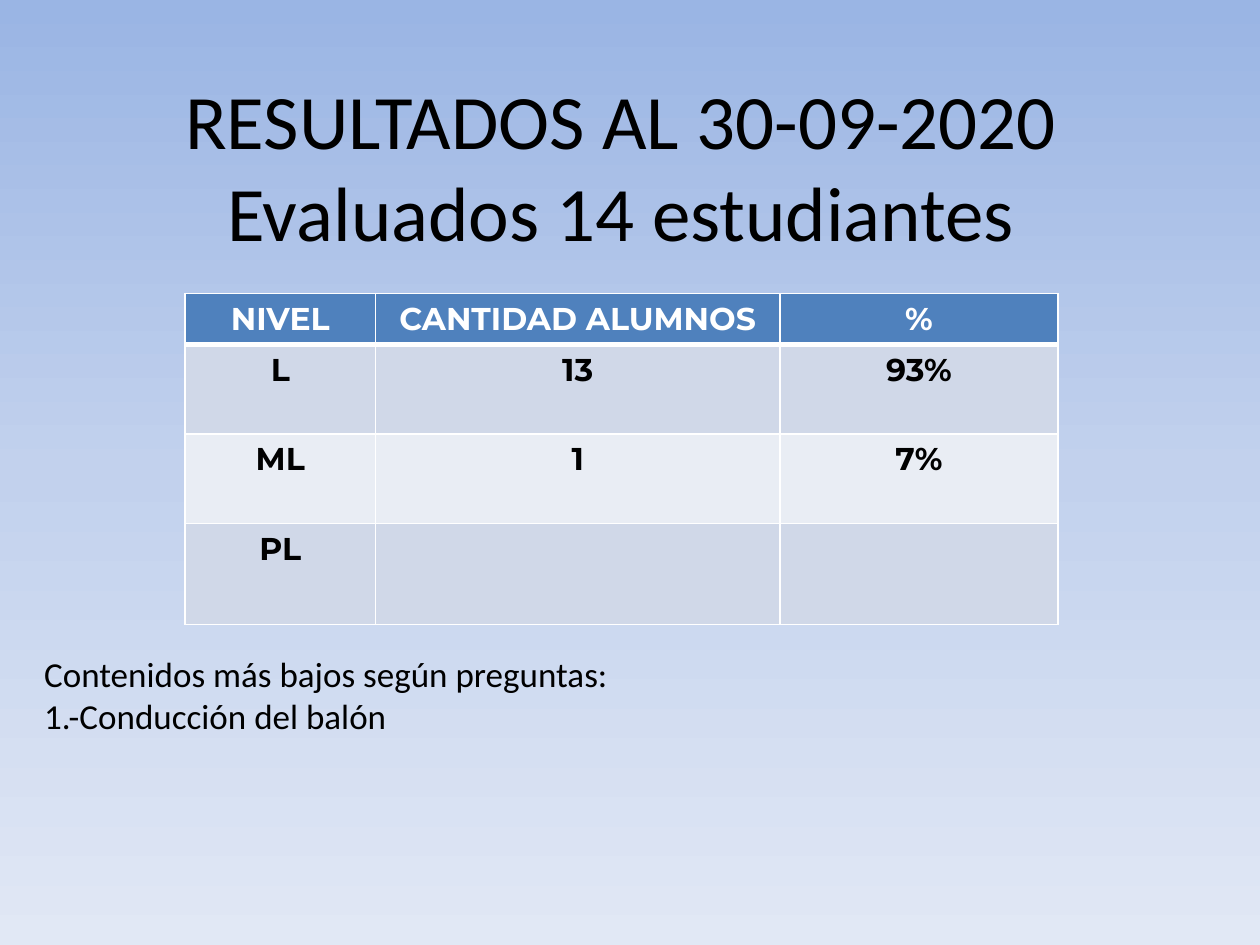
from copy import deepcopy

from lxml.etree import SubElement
from pptx import Presentation
from pptx.dml.color import RGBColor
from pptx.enum.text import MSO_ANCHOR, MSO_AUTO_SIZE, PP_ALIGN
from pptx.oxml.ns import qn
from pptx.util import Cm, Pt

BLACK = RGBColor(0x00, 0x00, 0x00)
WHITE = RGBColor(0xFF, 0xFF, 0xFF)
HEADER_BLUE = RGBColor(0x4F, 0x81, 0xBD)
BAND_DARK = RGBColor(0xD0, 0xD8, 0xE8)
BAND_LIGHT = RGBColor(0xE9, 0xED, 0xF4)
SKY = [RGBColor(0x9A, 0xB5, 0xE4), RGBColor(0xC2, 0xD1, 0xED), RGBColor(0xE1, 0xE8, 0xF5)]


def set_font(paragraph, name, size, color, bold=False):
    font = paragraph.font
    font.name, font.size, font.bold = name, Pt(size), bold
    font.color.rgb = color


def add_border(cell, side, width):
    """Draw a white border on one side (L, R, T or B), width in points."""
    line = SubElement(cell._tc.get_or_add_tcPr(), qn(f"a:ln{side}"), w=str(Pt(width)))
    fill = SubElement(line, qn("a:solidFill"))
    SubElement(fill, qn("a:srgbClr"), val=str(WHITE))


prs = Presentation()
prs.slide_width, prs.slide_height = Cm(25.4), Cm(19.05)
slide = prs.slides.add_slide(prs.slide_layouts[5])

# Background: three-stop gradient from top to bottom
sky = slide.background.fill
sky.gradient()
sky.gradient_angle = 270
stop_list = slide._element.find(".//" + qn("a:gsLst"))
stop_list.append(deepcopy(stop_list[-1]))
for stop, color, position in zip(sky.gradient_stops, SKY, (0, 0.5, 1)):
    stop.color.rgb = color
    stop.position = position

# Title
title = slide.shapes.title
title.left, title.top, title.width, title.height = Cm(1.09), Cm(1.12), Cm(22.86), Cm(4.39)
title.text_frame.vertical_anchor = MSO_ANCHOR.MIDDLE
heading = title.text_frame.paragraphs[0]
heading.text = "RESULTADOS AL 30-09-2020\vEvaluados 14 estudiantes"
heading.alignment = PP_ALIGN.CENTER
set_font(heading, "Calibri", 44, BLACK)

# Results by level
results = [
    ("NIVEL", "CANTIDAD ALUMNOS", "%"),
    ("L", "13", "93%"),
    ("ML", "1", "7%"),
    ("PL", "", ""),
]
column_widths = [3.84, 8.15, 5.61]
row_heights = [1.03, 1.8, 1.8, 2.04]
table = slide.shapes.add_table(
    len(results), len(column_widths), Cm(3.73), Cm(5.92),
    Cm(sum(column_widths)), Cm(sum(row_heights)),
).table
for column, width in zip(table.columns, column_widths):
    column.width = Cm(width)

for r, (levels, height) in enumerate(zip(results, row_heights)):
    table.rows[r].height = Cm(height)
    row_fill = HEADER_BLUE if r == 0 else BAND_DARK if r % 2 else BAND_LIGHT
    for c, value in enumerate(levels):
        cell = table.cell(r, c)
        add_border(cell, "L", 1)
        add_border(cell, "R", 1)
        add_border(cell, "T", 3 if r == 1 else 1)
        add_border(cell, "B", 3 if r == 0 else 1)
        cell.fill.solid()
        cell.fill.fore_color.rgb = row_fill
        entry = cell.text_frame.paragraphs[0]
        entry.text = value
        entry.alignment = PP_ALIGN.CENTER
        set_font(entry, "Montserrat", 18, BLACK if r else WHITE, bold=True)

# Weakest contents
contents = slide.shapes.add_textbox(Cm(0.64), Cm(13.03), Cm(23.8), Cm(1.96)).text_frame
contents.word_wrap = True
contents.auto_size = MSO_AUTO_SIZE.SHAPE_TO_FIT_TEXT
contents.text = "Contenidos más bajos según preguntas:\n1.-Conducción del balón"
for paragraph in contents.paragraphs:
    set_font(paragraph, "Calibri", 20, BLACK)

prs.save("out.pptx")
